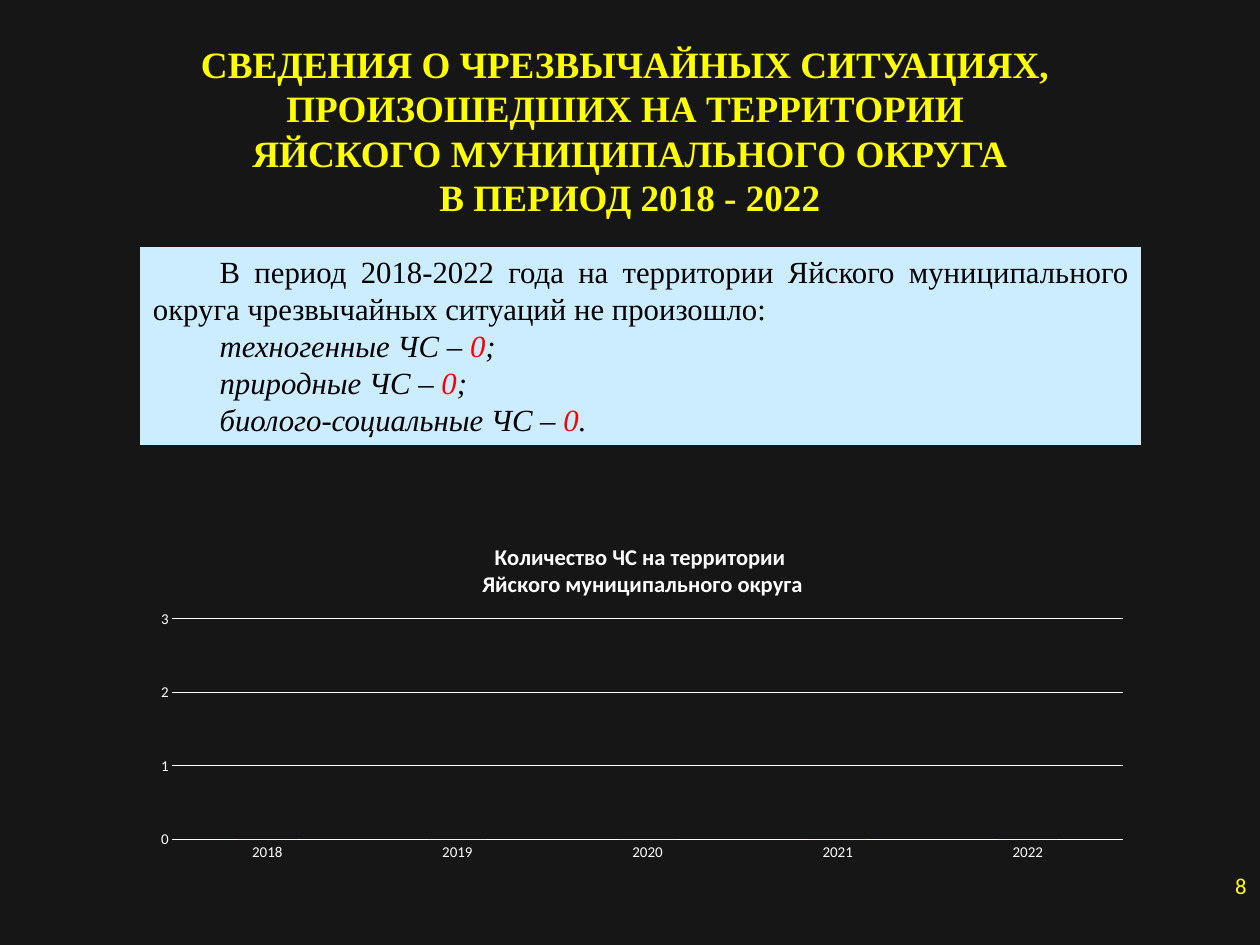
from pptx import Presentation
from pptx.chart.data import CategoryChartData
from pptx.dml.color import RGBColor
from pptx.enum.chart import XL_CHART_TYPE as ChartType, XL_TICK_MARK as TickMark
from pptx.enum.shapes import MSO_SHAPE as Shape
from pptx.enum.text import MSO_ANCHOR as Anchor, PP_ALIGN as Align
from pptx.oxml import parse_xml
from pptx.oxml.ns import nsdecls
from pptx.util import Inches, Pt

SERIF, SANS = "Times New Roman", "Calibri"
DARK, PALE, YELLOW = "171616", "CCECFF", "FFFF00"
BLACK, RED, WHITE, ORANGE = "000000", "FF0000", "FFFFFF", "F29054"

TITLE = [
    "СВЕДЕНИЯ О ЧРЕЗВЫЧАЙНЫХ СИТУАЦИЯХ, ",
    "ПРОИЗОШЕДШИХ НА ТЕРРИТОРИИ ",
    "ЯЙСКОГО МУНИЦИПАЛЬНОГО ОКРУГА",
    "В ПЕРИОД 2018 - 2022",
]
INTRO = ("В период 2018-2022 года на территории Яйского муниципального "
         "округа чрезвычайных ситуаций не произошло: ")
COUNTS = [
    ("техногенные ЧС – ", "0", "; "),
    ("природные ЧС – ", "0", "; "),
    ("биолого-социальные ЧС – ", "0", ". "),
]
CHART_TITLE = ["Количество ЧС на территории ", "Яйского муниципального округа"]
YEARS = ["2018", "2019", "2020", "2021", "2022"]
INCIDENTS = [0, 0, 0, 0, 0]
PAGE_NUMBER = "8"
PLOT_AREA = {"x": 0.03, "y": 0.27, "w": 0.95, "h": 0.65}

TITLE_FONT = dict(name=SERIF, size=Pt(29.7), bold=True)
BODY_FONT = dict(name=SERIF, size=Pt(24.6))
NUMBER_FONT = dict(name=SANS, size=Pt(18.1))
AXIS_FONT = dict(name=SANS, size=Pt(12), bold=False)
CHART_TITLE_FONT = dict(name=SANS, size=Pt(18), bold=True)


def rgb(color):
    return RGBColor.from_string(color)


def set_font(font, color, **values):
    for name, value in values.items():
        setattr(font, name, value)
    font.color.rgb = rgb(color)


def place(shape, *bounds):
    for name, value in zip(("left", "top", "width", "height"), bounds):
        setattr(shape, name, Inches(value))


def set_frame(frame, anchor):
    frame.word_wrap = True
    frame.vertical_anchor = anchor
    frame.margin_left = frame.margin_right = Inches(0.15)
    frame.margin_top = frame.margin_bottom = Inches(0.08)


def write(frame, paragraphs, align, indent=0):
    """Fill a frame; each paragraph is a list of (text, color, font values)."""
    for index, spans in enumerate(paragraphs):
        para = frame.add_paragraph() if index else frame.paragraphs[0]
        para.alignment = align
        if indent:
            properties = para._p.get_or_add_pPr()
            properties.set("marL", "0")
            properties.set("indent", str(Inches(indent)))
        for text, color, values in spans:
            span = para.add_run()
            span.text = text
            set_font(span.font, color, **values)


def set_line(line, color):
    line.color.rgb = rgb(color)
    line.width = Pt(0.75)


def add_incident_chart(page):
    data = CategoryChartData()
    data.categories = YEARS
    data.add_series("Series 1", INCIDENTS)
    bounds = [Inches(n) for n in (1.58, 5.86, 11.12, 3.77)]
    chart = page.shapes.add_chart(ChartType.COLUMN_CLUSTERED, *bounds, data).chart
    chart.has_legend = False
    set_font(chart.font, WHITE, name=SANS, size=Pt(10))
    chart.has_title = True
    write(chart.chart_title.text_frame,
          [[(line, WHITE, CHART_TITLE_FONT)] for line in CHART_TITLE], Align.CENTER)
    chart.chart_title.include_in_layout = False

    plot = chart.plots[0]
    plot.gap_width, plot.overlap, plot.vary_by_categories = 219, -27, False
    fill = plot.series[0].format.fill
    fill.solid()
    fill.fore_color.rgb = rgb(ORANGE)

    for axis in (chart.category_axis, chart.value_axis):
        axis.major_tick_mark = axis.minor_tick_mark = TickMark.NONE
        set_font(axis.tick_labels.font, WHITE, **AXIS_FONT)
    chart.category_axis.has_major_gridlines = False
    set_line(chart.category_axis.format.line, WHITE)
    values = chart.value_axis
    values.minimum_scale, values.maximum_scale, values.major_unit = 0, 3, 1
    values.has_major_gridlines = True
    set_line(values.major_gridlines.format.line, WHITE)
    values.format.line.fill.background()

    modes = "".join(f'<c:{side}Mode val="edge"/>' for side in "xy")
    sizes = "".join(f'<c:{key} val="{value}"/>' for key, value in PLOT_AREA.items())
    layout = parse_xml(
        f'<c:layout {nsdecls("c")}><c:manualLayout><c:layoutTarget val="inner"/>'
        f'{modes}{sizes}</c:manualLayout></c:layout>')
    plot_area = chart._chartSpace.chart.plotArea
    for old in plot_area.xpath("./c:layout"):
        plot_area.remove(old)
    plot_area.insert(0, layout)


def main():
    deck = Presentation()
    deck.slide_width, deck.slide_height = Inches(14), Inches(10.5)
    page = deck.slides.add_slide(deck.slide_layouts[5])
    page.background.fill.solid()
    page.background.fill.fore_color.rgb = rgb(DARK)

    title = page.shapes.title
    place(title, 0, 0.47, 14, 1.95)
    set_frame(title.text_frame, Anchor.MIDDLE)
    write(title.text_frame, [[(line, YELLOW, TITLE_FONT)] for line in TITLE], Align.CENTER)

    bounds = [Inches(n) for n in (1.55, 2.73, 11.14, 2.22)]
    summary = page.shapes.add_shape(Shape.RECTANGLE, *bounds)
    summary.shadow.inherit = False
    summary.fill.solid()
    summary.fill.fore_color.rgb = rgb(PALE)
    summary.line.color.rgb = rgb(DARK)
    summary.line.width = Pt(1.5)
    set_frame(summary.text_frame, Anchor.TOP)
    italic = dict(BODY_FONT, italic=True)
    counts = [[(text, color, italic) for text, color in zip(row, (BLACK, RED, BLACK))]
              for row in COUNTS]
    write(summary.text_frame, [[(INTRO, BLACK, BODY_FONT)]] + counts,
          Align.JUSTIFY, indent=0.74)

    add_incident_chart(page)

    bounds = [Inches(n) for n in (10.73, 9.58, 3.27, 0.52)]
    number = page.shapes.add_textbox(*bounds)
    set_frame(number.text_frame, Anchor.MIDDLE)
    write(number.text_frame, [[(PAGE_NUMBER, YELLOW, NUMBER_FONT)]], Align.RIGHT)

    deck.save("out.pptx")


if __name__ == "__main__":
    main()
